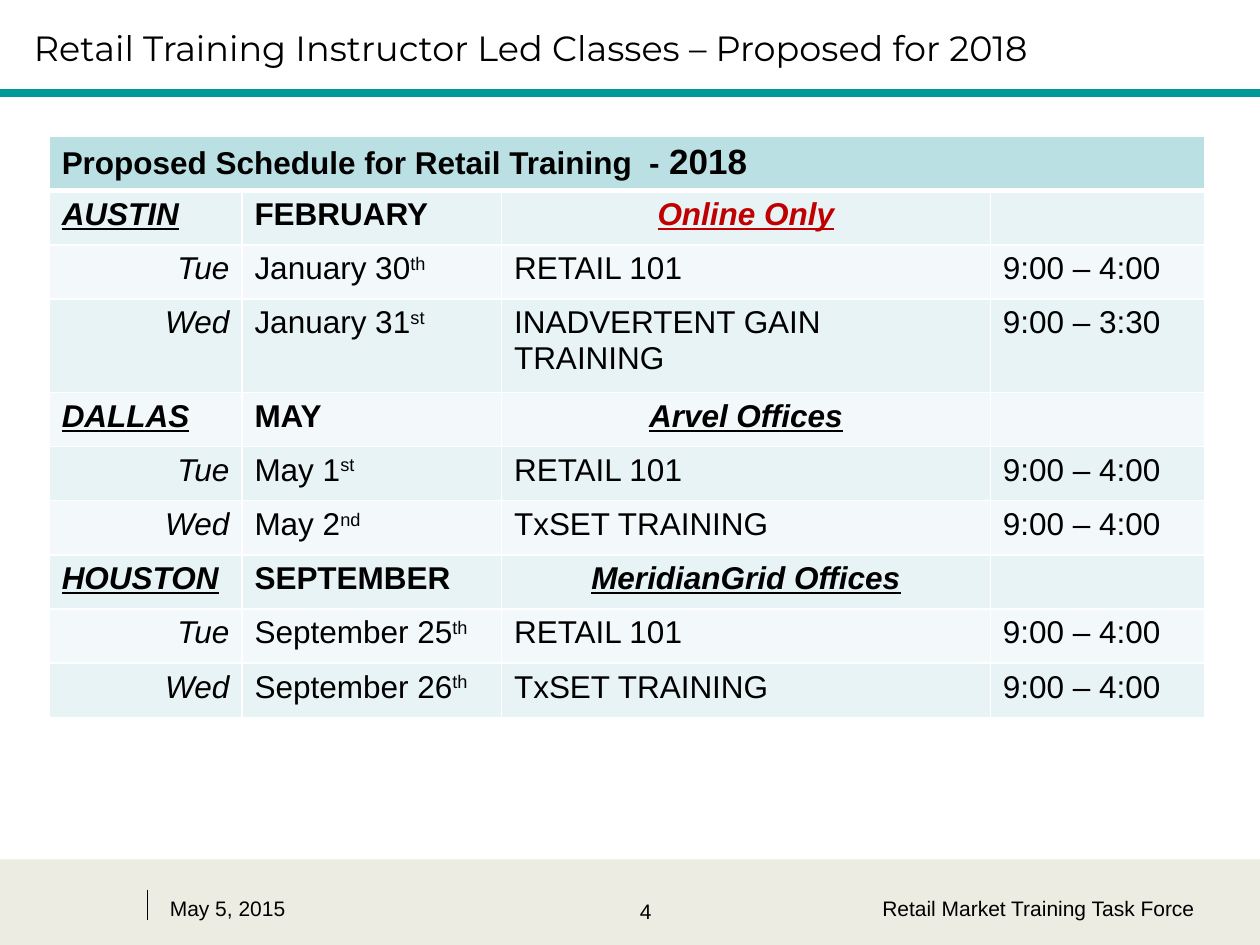
from lxml.etree import SubElement
from pptx import Presentation
from pptx.dml.color import RGBColor
from pptx.enum.shapes import MSO_CONNECTOR, MSO_SHAPE
from pptx.enum.text import MSO_ANCHOR, PP_ALIGN
from pptx.oxml import parse_xml
from pptx.oxml.ns import nsdecls, qn
from pptx.util import Inches, Pt


def color(value):
    return RGBColor.from_string(value)


def add_run(paragraph, text, size=18, font_color="000000", name="Arial", **formats):
    run = paragraph.add_run()
    run.text = text
    run.font.color.rgb = color(font_color)
    for attribute, value in {"size": Pt(size), "name": name, **formats}.items():
        setattr(run.font, attribute, value)
    return run


presentation = Presentation()
presentation.slide_width = Inches(10)
presentation.slide_height = Inches(7.5)
slide = presentation.slides.add_slide(presentation.slide_layouts[6])

footer = slide.shapes.add_shape(
    MSO_SHAPE.RECTANGLE, Inches(0), Inches(6.82), Inches(10), Inches(0.68)
)
footer.shadow.inherit = False
footer.fill.solid()
footer.fill.fore_color.rgb = color("ECECE2")
footer.line.fill.background()

rules = [
    (1.17, 7.06, 1.17, 7.3, "000000", 0.75),
    (0, 0.74, 10, 0.74, "009999", 4.5),
]
for left, top, right, bottom, line_color, width in rules:
    connector = slide.shapes.add_connector(
        MSO_CONNECTOR.STRAIGHT, Inches(left), Inches(top), Inches(right), Inches(bottom)
    )
    connector.line.color.rgb = color(line_color)
    connector.line.width = Pt(width)
    SubElement(connector.element.spPr, qn("a:effectLst"))

TITLE = "Retail Training Instructor Led Classes – Proposed for 2018"
labels = [
    (TITLE, 0.17, 0, 9.5, 0.75, PP_ALIGN.LEFT, MSO_ANCHOR.MIDDLE, 20, "Montserrat"),
    ("4", 3.75, 7.08, 2.75, 0.5, PP_ALIGN.CENTER, MSO_ANCHOR.TOP, 12, "Arial"),
    ("Retail Market Training Task Force", 6.83, 7.06, 2.75, 0.5,
     PP_ALIGN.RIGHT, MSO_ANCHOR.TOP, 12, "Arial"),
    ("May 5, 2015", 1.25, 7.06, 2.33, 0.5, PP_ALIGN.LEFT, MSO_ANCHOR.TOP, 12, "Arial"),
]
for text, left, top, width, height, alignment, anchor, size, name in labels:
    box = slide.shapes.add_textbox(Inches(left), Inches(top), Inches(width), Inches(height))
    box.text_frame.word_wrap = True
    box.text_frame.vertical_anchor = anchor
    paragraph = box.text_frame.paragraphs[0]
    paragraph.alignment = alignment
    add_run(paragraph, text, size, name=name)

sessions = [
    ("AUSTIN", "FEBRUARY", "Online Only", "C00000", [
        ("Tue", "January 30", "th", "RETAIL 101", "9:00 – 4:00"),
        ("Wed", "January 31", "st", "INADVERTENT GAIN TRAINING", "9:00 – 3:30"),
    ]),
    ("DALLAS", "MAY", "Arvel Offices", "000000", [
        ("Tue", "May 1", "st", "RETAIL 101", "9:00 – 4:00"),
        ("Wed", "May 2", "nd", "TxSET TRAINING", "9:00 – 4:00"),
    ]),
    ("HOUSTON", "SEPTEMBER", "MeridianGrid Offices", "000000", [
        ("Tue", "September 25", "th", "RETAIL 101", "9:00 – 4:00"),
        ("Wed", "September 26", "th", "TxSET TRAINING", "9:00 – 4:00"),
    ]),
]
column_widths = [1.53, 2.06, 3.88, 1.7]
row_heights = [0.43] * 3 + [0.74] + [0.43] * 6
table = slide.shapes.add_table(
    len(row_heights), len(column_widths), Inches(0.39), Inches(1.08),
    Inches(sum(column_widths)), Inches(sum(row_heights)),
).table
for column, width in zip(table.columns, column_widths):
    column.width = Inches(width)
for row, height in zip(table.rows, row_heights):
    row.height = Inches(height)

for row_index, row in enumerate(table.rows):
    fill_color = "BBE0E3" if row_index == 0 else ("F3F9FA", "E7F3F4")[row_index % 2]
    for cell in row.cells:
        cell.fill.solid()
        cell.fill.fore_color.rgb = color(fill_color)
        borders = {
            "lnL": 1,
            "lnR": 1,
            "lnT": 3 if row_index == 1 else 1,
            "lnB": 3 if row_index == 0 else 1,
        }
        properties = cell._tc.get_or_add_tcPr()
        for position, (side, width) in enumerate(borders.items()):
            properties.insert(position, parse_xml(
                f'<a:{side} {nsdecls("a")} w="{Pt(width)}"><a:solidFill>'
                f'<a:srgbClr val="FFFFFF"/></a:solidFill></a:{side}>'
            ))

table.cell(0, 0).merge(table.cell(0, 3))
heading = table.cell(0, 0).text_frame.paragraphs[0]
add_run(heading, "Proposed Schedule for Retail Training  - ", bold=True)
add_run(heading, "2018", 20, bold=True)

emphasis = {"bold": True, "italic": True, "underline": True}
row_index = 1
for city, month, venue, venue_color, classes in sessions:
    place, date, course, _ = [
        cell.text_frame.paragraphs[0] for cell in table.rows[row_index].cells
    ]
    add_run(place, city, **emphasis)
    add_run(date, month, bold=True)
    course.alignment = PP_ALIGN.CENTER
    add_run(course, venue, font_color=venue_color, **emphasis)
    for offset, (weekday, day, suffix, subject, hours) in enumerate(classes, 1):
        place, date, course, time = [
            cell.text_frame.paragraphs[0] for cell in table.rows[row_index + offset].cells
        ]
        place.alignment = PP_ALIGN.RIGHT
        add_run(place, weekday, bold=False, italic=True)
        add_run(date, day, bold=False)
        ordinal = add_run(date, suffix, bold=False)
        ordinal._r.get_or_add_rPr().set("baseline", "30000")
        add_run(course, subject, bold=False)
        add_run(time, hours, bold=False)
    row_index += len(classes) + 1

presentation.save("out.pptx")
